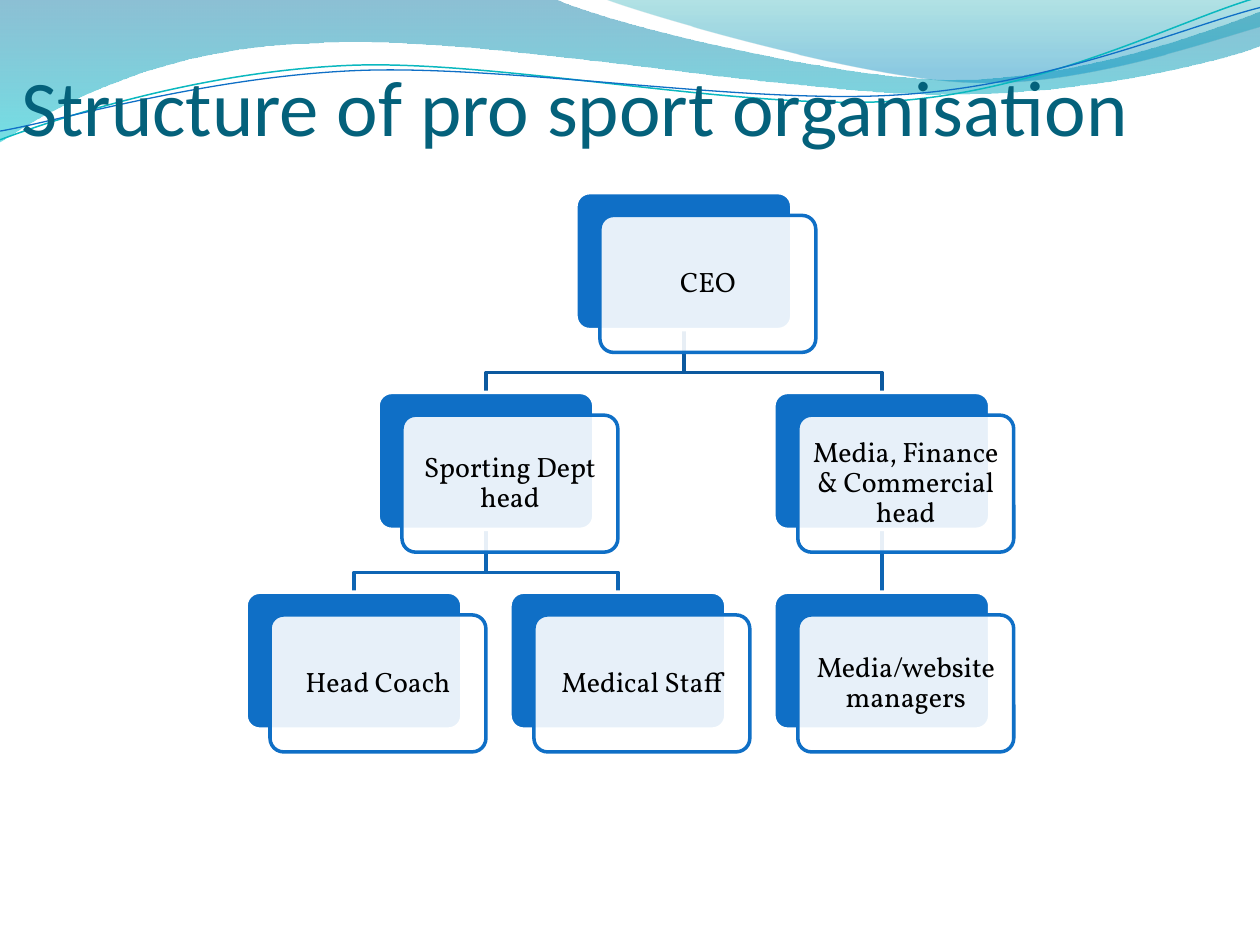
import pptx
import pptx.util
import pptx.dml.color
import pptx.enum.shapes
import pptx.enum.text
import pptx.oxml.ns
from lxml import etree

Pt = pptx.util.Pt
RGB = pptx.dml.color.RGBColor.from_string
qn = pptx.oxml.ns.qn

COLORS = {
    "blue": "0F6FC6", "teal": "0AB8BF", "title": "04617B",
    "white": "FFFFFF", "black": "000000",
    "link_top": "0C599F", "link_low": "0E65B4",
    "wave_blue": "0074A1", "wave_cyan": "00C6CF",
    "crest_green": "00A1A9", "crest_blue": "008BBF",
}

deck = pptx.Presentation()
deck.slide_width, deck.slide_height = Pt(720), Pt(540)
page = deck.slides.add_slide(deck.slide_layouts[5])


def draw_path(steps, closed=False, line=None, width=1):
    """Draw an outline; a step of 2 numbers is a corner, one of 6 a Bezier curve."""
    points = [(Pt(step[i]), Pt(step[i + 1])) for step in steps for i in range(0, len(step), 2)]
    builder = page.shapes.build_freeform(*points[0])
    builder.add_line_segments(points[1:], close=closed)
    shape = builder.convert_to_shape()
    # Gather the three points of each curve into one cubic segment
    segments = iter(list(shape.element.iter(qn("a:lnTo"))))
    for step in steps[1:]:
        segment = next(segments)
        if len(step) == 6:
            segment.addprevious(etree.Element(qn("a:cubicBezTo")))
            curve = segment.getprevious()
            for part in (segment, next(segments), next(segments)):
                curve.append(part[0])
                part.getparent().remove(part)
    shape.shadow.inherit = False
    shape.fill.background()
    if line:
        shape.line.color.rgb = RGB(COLORS[line])
        shape.line.width = Pt(width)
    else:
        shape.line.fill.background()
    return shape


def set_alpha(fill_element, percents):
    """Set the opacity of each colour in a fill, in order."""
    for color, percent in zip(fill_element.iter(qn("a:srgbClr")), percents):
        etree.SubElement(color, qn("a:alpha")).set("val", str(percent * 1000))


# Translucent waves along the top
waves = [
    ([(0, 0), (316.8, -0.7), (342.7, 12.2, 478.1, 45.4, 545.8, 45.4),
      (614.2, 45.4, 689.8, 18.7, 720, 6.5), (720.7, 25.9),
      (707.8, 31.7, 626.4, 54.7, 537.1, 54), (447.8, 54, 275, 20.2, 185, 24.5),
      (92.9, 25.9, 33.1, 59.8, -0.7, 81.4)],
     [("wave_blue", 0, 45), ("wave_cyan", 1, 55)]),
    ([(344.9, -0.7), (366.5, 7.9, 491, 44.6, 553.7, 46.8),
      (616.3, 49.7, 691.9, 23, 720, 15.1), (720, 0)],
     [("crest_green", 0, 30), ("crest_blue", 0.8, 45)]),
]
for outline, stops in waves:
    wave = draw_path(outline, closed=True)
    wave.fill.gradient()
    wave.fill.gradient_angle = 270
    for stop, (color, position, _) in zip(wave.fill.gradient_stops, stops):
        stop.color.rgb = RGB(COLORS[color])
        stop.position = position
    set_alpha(wave.element.spPr.find(qn("a:gradFill")), [stop[2] for stop in stops])

# Thin wave lines
draw_path([(0, 79.9), (34.6, 67, 113.8, 41, 199.4, 37.4),
           (284.4, 33.8, 427, 64.1, 513.4, 57.6),
           (599.8, 51.1, 675.4, 10.8, 718.6, -1.4)], line="teal", width=0.85)
draw_path([(0, 74.9), (33.8, 69.1, 118.1, 43.9, 203.8, 40.3),
           (290.2, 36.7, 429.8, 60.5, 516.2, 54),
           (601.9, 48.2, 677.5, 15.1, 720, 4.3)], line="blue", width=0.75)

# Title, in front of the waves
title = page.shapes.title
title.element.getparent().append(title.element)
title.left, title.top, title.width, title.height = Pt(12.2), Pt(26), Pt(635.8), Pt(61.2)
frame = title.text_frame
frame.word_wrap = True
frame.auto_size = pptx.enum.text.MSO_AUTO_SIZE.NONE
frame.vertical_anchor = pptx.enum.text.MSO_ANCHOR.BOTTOM
frame.margin_left = frame.margin_right = frame.margin_bottom = 0
frame.margin_top = Pt(3.6)
para = frame.paragraphs[0]
para.alignment = pptx.enum.text.PP_ALIGN.LEFT
span = para.add_run()
span.text = "Structure of pro sport organisation"
span.font.name, span.font.size = "Calibri", Pt(45)
span.font.color.rgb = RGB(COLORS["title"])

# Organisation chart grid: name -> (column, row)
LEFT, TOP, COLUMN, ROW = 140.6, 110.1, 75.4, 114.15
CARD_WIDTH, CARD_HEIGHT = 123.4, 78.3
SHIFT_X, SHIFT_Y = 13.7, 13
BEND = 24.5
cards = {
    "CEO": (2.5, 0),
    "Sporting Dept head": (1, 1),
    "Head Coach": (0, 2),
    "Medical Staff": (2, 2),
    "Media, Finance & Commercial head": (4, 1),
    "Media/website managers": (4, 2),
}
links = [
    ("Media, Finance & Commercial head", "Media/website managers"),
    ("CEO", "Media, Finance & Commercial head"),
    ("Sporting Dept head", "Medical Staff"),
    ("Sporting Dept head", "Head Coach"),
    ("CEO", "Sporting Dept head"),
]

# Links, behind the cards
straight_links = []
for parent, child in links:
    (start_column, start_row), (end_column, end_row) = cards[parent], cards[child]
    start_x = LEFT + start_column * COLUMN + CARD_WIDTH / 2
    end_x = LEFT + end_column * COLUMN + CARD_WIDTH / 2
    start_y = TOP + start_row * ROW + CARD_HEIGHT
    end_y = TOP + end_row * ROW
    color = "link_low" if start_row else "link_top"
    if start_x == end_x:
        link = page.shapes.add_connector(
            pptx.enum.shapes.MSO_CONNECTOR.STRAIGHT,
            Pt(start_x), Pt(start_y), Pt(end_x), Pt(end_y))
        link.line.color.rgb = RGB(COLORS[color])
        link.line.width = Pt(2)
        etree.SubElement(link.element.spPr, qn("a:effectLst"))
        straight_links.append((link, parent, child))
    else:
        draw_path([(start_x, start_y), (start_x, start_y + BEND),
                   (end_x, start_y + BEND), (end_x, end_y)], line=color, width=2)

# Cards: a solid back and a translucent front with the text
backs = {}
for name, (column, row) in cards.items():
    layers = []
    for depth, (fill, line) in enumerate([("blue", "white"), ("white", "blue")]):
        box = page.shapes.add_shape(
            pptx.enum.shapes.MSO_SHAPE.ROUNDED_RECTANGLE,
            Pt(LEFT + column * COLUMN + depth * SHIFT_X),
            Pt(TOP + row * ROW + depth * SHIFT_Y), Pt(CARD_WIDTH), Pt(CARD_HEIGHT))
        box.adjustments[0] = 0.1
        box.shadow.inherit = False
        box.fill.solid()
        box.fill.fore_color.rgb = RGB(COLORS[fill])
        box.line.color.rgb = RGB(COLORS[line])
        box.line.width = Pt(2)
        layers.append(box)
    backs[name], front = layers
    set_alpha(front.element.spPr.find(qn("a:solidFill")), [90])
    frame = front.text_frame
    frame.word_wrap = True
    frame.vertical_anchor = pptx.enum.text.MSO_ANCHOR.MIDDLE
    frame.margin_left = frame.margin_right = Pt(4.8)
    frame.margin_top = frame.margin_bottom = Pt(4.8)
    para = frame.paragraphs[0]
    para.alignment = pptx.enum.text.PP_ALIGN.CENTER
    para.line_spacing = 0.9
    para.space_after = Pt(5.6)
    span = para.add_run()
    span.text = name
    span.font.name, span.font.size = "Vollkorn", Pt(16)
    span.font.color.rgb = RGB(COLORS["black"])

# Join the straight links to their cards
for link, parent, child in straight_links:
    link.begin_connect(backs[parent], 2)
    link.end_connect(backs[child], 0)

deck.save("out.pptx")
